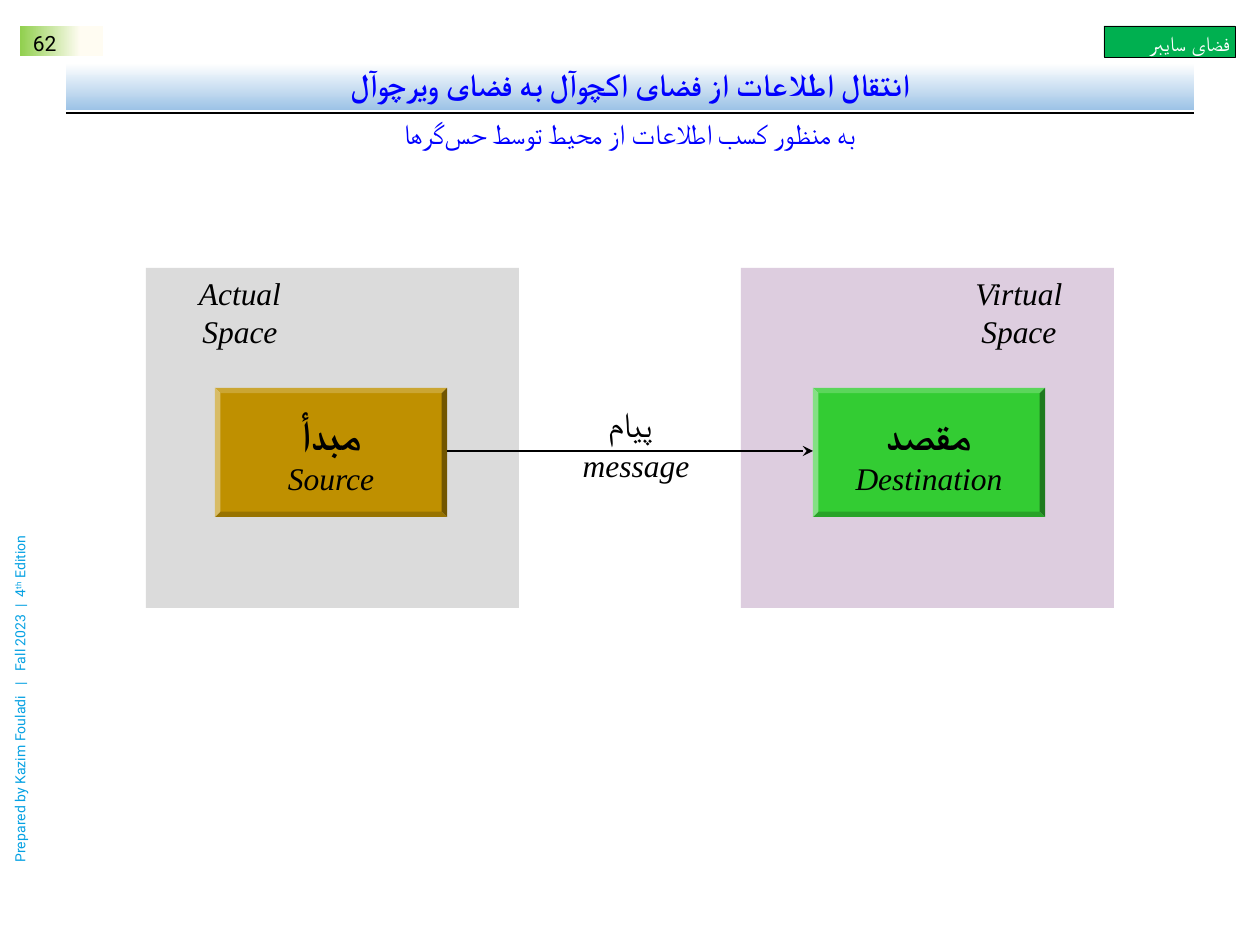
from lxml import etree
from pptx import Presentation
from pptx.dml.color import RGBColor
from pptx.enum.shapes import MSO_CONNECTOR, MSO_SHAPE
from pptx.enum.text import MSO_ANCHOR, MSO_AUTO_SIZE, PP_ALIGN
from pptx.oxml.ns import qn
from pptx.util import Pt

PX = 7257
RECTANGLE, BEVEL = MSO_SHAPE.RECTANGLE, MSO_SHAPE.BEVEL
STRAIGHT = MSO_CONNECTOR.STRAIGHT
TOP, MIDDLE = MSO_ANCHOR.TOP, MSO_ANCHOR.MIDDLE
LEFT, CENTER, RIGHT = PP_ALIGN.LEFT, PP_ALIGN.CENTER, PP_ALIGN.RIGHT
PERSIAN, SERIF, SANS = "Calibri", "Times New Roman", "Roboto"
NON_JOINER = chr(8204)

COLORS = {name: RGBColor.from_string(value) for name, value in {
    "black": "000000", "white": "FFFFFF", "blue": "0000FF", "sky": "9DC3E6",
    "cream": "FFFCF2", "lime": "92D050", "tag": "00B050", "credit": "04A1E3",
    "actual": "DBDBDB", "virtual": "DDCDDF", "source": "BF9000",
    "destination": "33CC33"}.items()}


def add_box(x, y, w, h, kind=None, fill=None):
    bounds = [value * PX for value in (x, y, w, h)]
    if kind is None:
        return page.shapes.add_textbox(*bounds)
    box = page.shapes.add_shape(kind, *bounds)
    box.shadow.inherit = False
    box.line.fill.background()
    if fill:
        box.fill.solid()
        box.fill.fore_color.rgb = COLORS[fill]
    return box


def write(box, lines, color="black", align=CENTER, anchor=TOP, insets=(13, 6, 13, 6)):
    frame = box.text_frame
    frame.word_wrap = True
    frame.auto_size = MSO_AUTO_SIZE.NONE
    frame.vertical_anchor = anchor
    (frame.margin_left, frame.margin_top,
     frame.margin_right, frame.margin_bottom) = [value * PX for value in insets]
    frame.text = "\n".join(line[0] for line in lines)
    for para, (text, size, font, bold, italic) in zip(frame.paragraphs, lines):
        para.alignment = align
        if font == PERSIAN:
            para._p.get_or_add_pPr().set("rtl", "1")
        for span in para.runs:
            span.font.size = Pt(size)
            span.font.name = font
            span.font.bold = bold
            span.font.italic = italic
            span.font.color.rgb = COLORS[color]
            etree.SubElement(span.font._element, qn("a:cs"), typeface=font)


deck = Presentation()
deck.slide_width = 1260 * PX
deck.slide_height = 945 * PX
page = deck.slides.add_slide(deck.slide_layouts[5])

title = page.shapes.title
title.left, title.top, title.width, title.height = [v * PX for v in (66, 63, 1128, 47)]
write(title, [("انتقال اطلاعات از فضای اکچوآل به فضای ویرچوآل", 18, PERSIAN, True, False)],
      "blue", anchor=MIDDLE)
title.text_frame.paragraphs[0].line_spacing = 0.9

number = add_box(20, 26, 83, 30, RECTANGLE)
write(number, [("62", 12, SANS, False, False)], align=LEFT, insets=(13, 5, 13, 0))

for box, angle, stops in (
        (title, 270, ((0, "white"), (1, "sky"))),
        (number, 180, ((0.27, "cream"), (0.99, "lime")))):
    box.fill.gradient()
    box.fill.gradient_angle = angle
    for stop, (position, color) in zip(box.fill.gradient_stops, stops):
        stop.position = position
        stop.color.rgb = COLORS[color]

tag = add_box(1104, 26, 131, 31, RECTANGLE, "tag")
tag.line.color.rgb = COLORS["black"]
tag.line.width = Pt(0.5)
write(tag, [("فضای سایبر", 12, "Arial", False, False)], "white", RIGHT, MIDDLE, (5, 10, 5, 6))

credit = add_box(-166, 674, 373, 30)
credit.rotation = 270
write(credit, [("Prepared by Kazim Fouladi   |   Fall 2023  |  4", 8, SANS, False, False)],
      "credit", LEFT)
para = credit.text_frame.paragraphs[0]
for text, baseline in (("th", "30000"), (" Edition", "0")):
    span = para.add_run()
    span.text = text
    span.font.size = Pt(8)
    span.font.name = SANS
    span.font.color.rgb = COLORS["credit"]
    span.font._element.set("baseline", baseline)

subtitle = add_box(66, 117, 1128, 37)
sentence = NON_JOINER.join(("به منظور کسب اطلاعات از محیط توسط حس", "گرها"))
write(subtitle, [(sentence, 16, PERSIAN, False, False)], "blue", insets=(13, 3, 13, 6))
subtitle.text_frame.paragraphs[0].line_spacing = 0.9

for space, space_x, label, label_x, node, node_x, persian, english in (
        ("virtual", 741, "Virtual Space", 925, "destination", 813, "مقصد", "Destination"),
        ("actual", 146, "Actual Space", 146, "source", 215, "مبدأ", "Source")):
    add_box(space_x, 268, 373, 340, RECTANGLE, space)
    write(add_box(label_x, 268, 188, 89), [(label, 18, SERIF, False, True)])
    block = add_box(node_x, 388, 232, 129, BEVEL, node)
    block.adjustments[0] = 0.041
    write(block, [(persian, 24, PERSIAN, True, False), (english, 18, SERIF, False, True)],
          anchor=MIDDLE, insets=(5, 5, 5, 5))

write(add_box(542, 440, 188, 50), [("message", 18, SERIF, False, True)])
write(add_box(519, 396, 222, 55), [("پیام", 20, PERSIAN, False, False)])

for start, end, y, width, head in ((66, 1194, 113, 1.5, None), (447, 813, 451, 1.25, "stealth")):
    line = page.shapes.add_connector(STRAIGHT, start * PX, y * PX, end * PX, y * PX)
    line.line.color.rgb = COLORS["black"]
    line.line.width = Pt(width)
    if head:
        etree.SubElement(line.line._get_or_add_ln(), qn("a:tailEnd"), type=head)
    etree.SubElement(line._element.spPr, qn("a:effectLst"))

deck.save("out.pptx")
